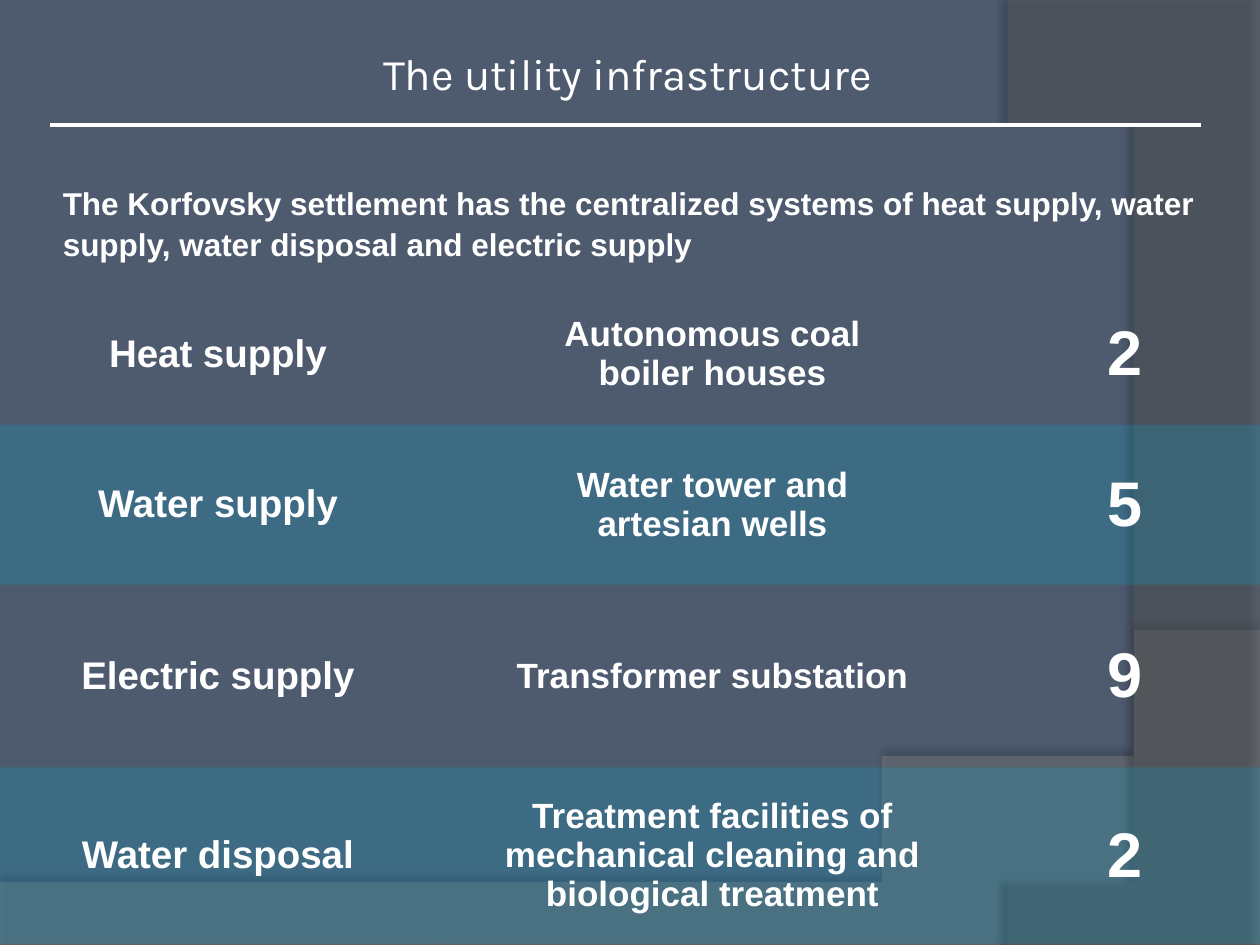
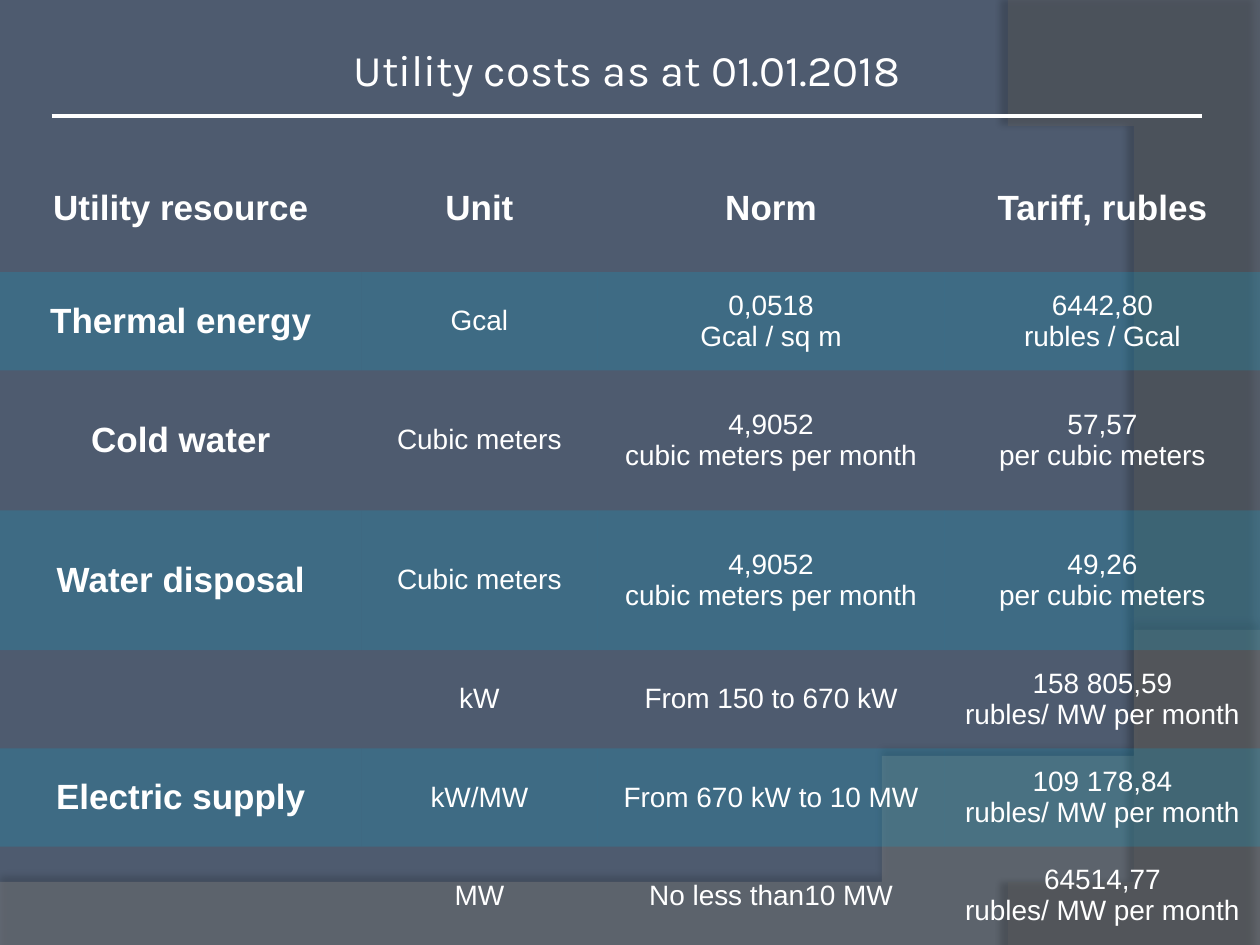
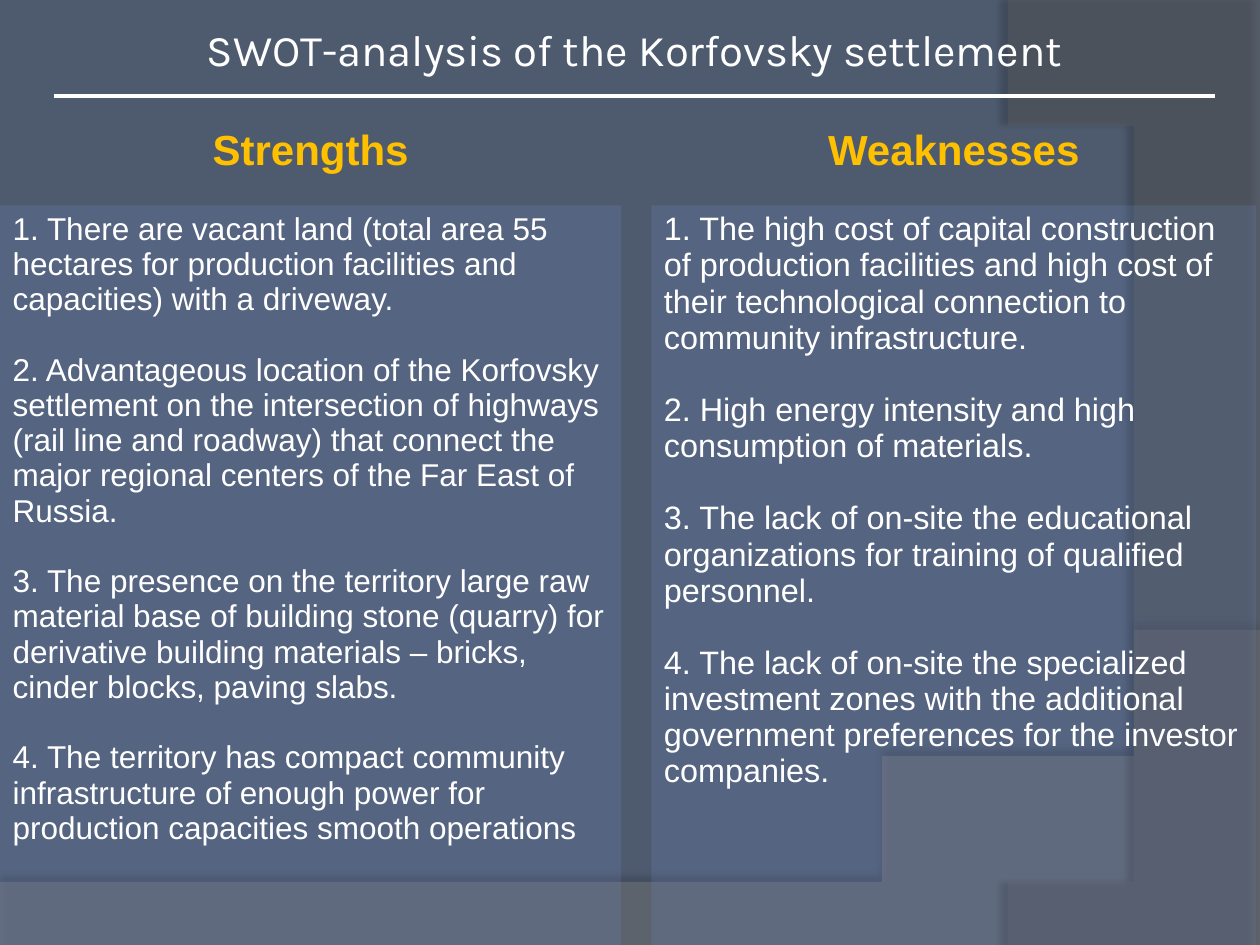
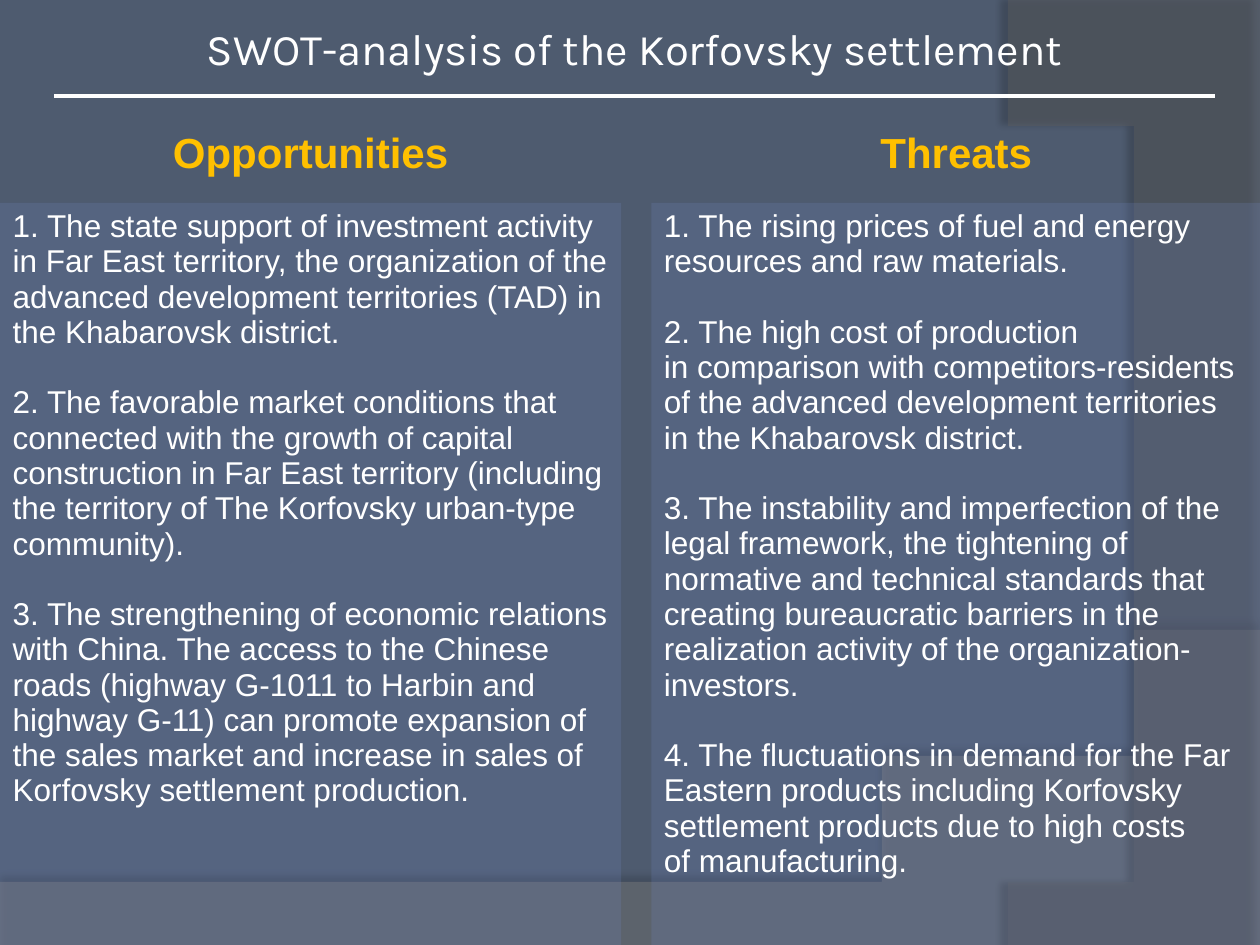
from dataclasses import dataclass, field
from typing import NamedTuple

from lxml import etree
from pptx import Presentation
from pptx import util as u
from pptx.dml.color import RGBColor
from pptx.enum import shapes, text
from pptx.oxml.ns import qn

CENTER, LEFT = text.PP_ALIGN.CENTER, text.PP_ALIGN.LEFT
TOP, MIDDLE = text.MSO_ANCHOR.TOP, text.MSO_ANCHOR.MIDDLE
PLAIN_TABLE_STYLE = "{2D5ABB26-0587-4C30-8999-92F81FD0307C}"


class Look(NamedTuple):
    size: float
    bold: bool = False
    color: str = "FFFFFF"
    font: str = "Arial"
    align: text.PP_ALIGN = CENTER
    anchor: text.MSO_ANCHOR = MIDDLE


@dataclass(frozen=True)
class Theme:
    background: str = "4E5B6F"
    rule: str = "FFFFFF"
    rule_width: float = 2.25
    row_tint: str = "00ADDC"
    panel_tint: str = "738AC8"
    tint_opacity: int = 20
    line_height: float = 1.117
    title: Look = Look(25, font="Karla", anchor=TOP)
    intro: Look = Look(18, bold=True, align=LEFT, anchor=TOP)
    supply: Look = Look(22, bold=True)
    facility: Look = Look(20, bold=True)
    count: Look = Look(36, bold=True)
    value: Look = Look(16)
    swot_head: Look = Look(24, bold=True, color="FFC000")
    swot_body: Look = Look(18, align=LEFT, anchor=TOP)
    swot_body_large: Look = Look(18.5, align=LEFT, anchor=TOP)


THEME = Theme()


class Point(NamedTuple):
    x: float
    y: float


class Shadow(NamedTuple):
    opacity: int
    blur: float
    distance: float
    direction: int


class Band(NamedTuple):
    outline: list[Point]
    color: str
    opacity: int
    shadow: Shadow


class Heading(NamedTuple):
    wording: str
    left: float
    top: float
    width: float
    height: float
    rule_left: float
    rule_y: float
    rule_right: float


class Cell(NamedTuple):
    wording: str = ""
    look: Look = THEME.value
    tint: str | None = None


@dataclass
class Grid:
    left: float
    top: float
    columns: list[float]
    rows: list[float]
    cells: list[list[Cell]] = field(default_factory=list)


def curve(start: Point, pull_a: Point, pull_b: Point, end: Point, steps: int = 40) -> list[Point]:
    """Points along a cubic Bezier curve, without its start."""
    points = []
    for step in range(1, steps + 1):
        t = step / steps
        weights = ((1 - t) ** 3, 3 * t * (1 - t) ** 2, 3 * t * t * (1 - t), t ** 3)
        ends = (start, pull_a, pull_b, end)
        points.append(Point(sum(w * p.x for w, p in zip(weights, ends)),
                            sum(w * p.y for w, p in zip(weights, ends))))
    return points


BANDS = [
    Band([Point(0, 7.05), Point(0, 7.51), Point(10, 7.51), Point(10, 5.2),
          *curve(Point(10, 5.2), Point(5.59, 7.29), Point(3.91, 7.19), Point(0, 7.05))],
         "7F7F7F", 45, Shadow(35, 4, 3.5, 270)),
    Band([Point(10, 0.02), Point(10, 7.5), Point(8.21, 7.5),
          *curve(Point(8.21, 7.5), Point(9.35, 6.19), Point(10.18, 3), Point(8, 0))],
         "5E5E5E", 40, Shadow(45, 4, 4, 180)),
]


def set_opacity(color_element, percent: int) -> None:
    etree.SubElement(color_element, qn("a:alpha"), val=str(percent * 1000))


def paint(fill, color: str) -> None:
    fill.solid()
    fill.fore_color.rgb = RGBColor.from_string(color)


def write(frame, wording: str, look: Look, gap: float = 0, spacing: float | None = None) -> None:
    """Fill a text frame; each line of the wording is a paragraph, gap points apart."""
    frame.text = wording
    font_format = {"name": look.font, "size": u.Pt(look.size), "bold": look.bold}
    for index, paragraph in enumerate(frame.paragraphs):
        paragraph.alignment = look.align
        if spacing:
            paragraph.line_spacing = spacing
        if index and gap:
            paragraph.space_before = u.Pt(gap)
        for run in paragraph.runs:
            for name, value in font_format.items():
                setattr(run.font, name, value)
            run.font.color.rgb = RGBColor.from_string(look.color)


def fit_frame(frame, look: Look) -> None:
    frame_format = {"word_wrap": True, "vertical_anchor": look.anchor,
                    "auto_size": text.MSO_AUTO_SIZE.SHAPE_TO_FIT_TEXT}
    for name, value in frame_format.items():
        setattr(frame, name, value)


def add_band(slide, band: Band):
    builder = slide.shapes.build_freeform(*band.outline[0], scale=u.Inches(1))
    builder.add_line_segments(band.outline[1:], close=True)
    shape = builder.convert_to_shape()
    paint(shape.fill, band.color)
    set_opacity(shape.element.xpath("./p:spPr/a:solidFill/a:srgbClr")[0], band.opacity)
    shape.line.fill.background()
    shape.shadow.inherit = False
    effects = shape.element.xpath("./p:spPr/a:effectLst")[0]
    shadow = etree.SubElement(
        effects, qn("a:outerShdw"), blurRad=str(u.Pt(band.shadow.blur)),
        dist=str(u.Pt(band.shadow.distance)), dir=str(band.shadow.direction * 60000),
        algn="ctr", rotWithShape="0")
    set_opacity(etree.SubElement(shadow, qn("a:srgbClr"), val="000000"), band.shadow.opacity)
    return shape


def dress_master(deck, slide) -> None:
    """Give the master its background and bands, which are drawn on a slide and moved."""
    master = deck.slide_master
    paint(master.background.fill, THEME.background)
    for index, band in enumerate(BANDS):
        shape = add_band(slide, band)
        shape.element.xpath(".//p:cNvPr")[0].set("id", str(20 + index))
        master.shapes.element.insert(2 + index, shape.element)


def add_heading(slide, heading: Heading) -> None:
    title = slide.shapes.title
    for side in ("left", "top", "width", "height"):
        setattr(title, side, u.Inches(getattr(heading, side)))
    write(title.text_frame, heading.wording, THEME.title)
    fit_frame(title.text_frame, THEME.title)

    y = u.Inches(heading.rule_y)
    rule = slide.shapes.add_connector(shapes.MSO_CONNECTOR.STRAIGHT, u.Inches(heading.rule_left), y,
                                      u.Inches(heading.rule_right), y)
    rule.line.color.rgb = RGBColor.from_string(THEME.rule)
    rule.line.width = u.Pt(THEME.rule_width)
    etree.SubElement(rule.element.xpath("./p:spPr")[0], qn("a:effectLst"))


def add_intro(slide, wording: str) -> None:
    box = slide.shapes.add_textbox(u.Inches(0.4), u.Inches(1.39), u.Inches(9.37), u.Inches(0.71))
    write(box.text_frame, wording, THEME.intro, spacing=1.08)
    fit_frame(box.text_frame, THEME.intro)


def add_grid(slide, grid: Grid) -> None:
    frame = slide.shapes.add_table(
        len(grid.rows), len(grid.columns), u.Inches(grid.left), u.Inches(grid.top),
        u.Inches(sum(grid.columns)), u.Inches(sum(grid.rows)))
    table = frame.table
    table.first_row = table.horz_banding = False
    frame.element.xpath(".//a:tableStyleId")[0].text = PLAIN_TABLE_STYLE
    for column, width in zip(table.columns, grid.columns):
        column.width = u.Inches(width)
    for row, height, contents in zip(table.rows, grid.rows, grid.cells):
        row.height = u.Inches(height)
        for cell, content in zip(row.cells, contents):
            look = content.look
            cell.vertical_anchor = look.anchor
            gap = round(look.size * THEME.line_height, 1) if look.anchor == TOP else 0
            write(cell.text_frame, content.wording, look, gap)
            if content.tint:
                paint(cell.fill, content.tint)
            else:
                cell.fill.background()
    for color in frame.element.xpath(".//a:tcPr/a:solidFill/a:srgbClr"):
        set_opacity(color, THEME.tint_opacity)


def striped(rows: list[tuple[str, ...]], looks: list[Look]) -> list[list[Cell]]:
    """Cells with one look per column and a tint on every second row."""
    return [[Cell(wording, look, THEME.row_tint if index % 2 else None)
             for wording, look in zip(row, looks)]
            for index, row in enumerate(rows)]


def swot(heads: tuple[str, str], bodies: tuple[str, str], looks: tuple[Look, Look]) -> list[list[Cell]]:
    """Two panels with headings and an empty column between them."""
    head_cells = [Cell(head, THEME.swot_head) for head in heads]
    body_cells = [Cell(body, look, THEME.panel_tint) for body, look in zip(bodies, looks)]
    return [[left, Cell(), right] for left, right in (head_cells, body_cells)]


INFRASTRUCTURE = [
    ("Heat supply", "Autonomous coal\nboiler houses", "2"),
    ("Water supply", "Water tower and\nartesian wells", "5"),
    ("Electric supply", "Transformer substation", "9"),
    ("Water disposal", "Treatment facilities of mechanical cleaning and biological treatment", "2"),
]
COST_HEADS = ("Utility resource", "Unit", "Norm", "Tariff, rubles")
COSTS = [
    ("Thermal energy", "Gcal", "0,0518\nGcal / sq m", "6442,80\nrubles / Gcal"),
    ("Cold water", "Cubic meters", "4,9052\ncubic meters per month", "57,57\nper cubic meters"),
    ("Water disposal", "Cubic meters", "4,9052\ncubic meters per month", "49,26\nper cubic meters"),
    ("", "kW", "From 150 to 670 kW", "158 805,59\nrubles/ MW per month"),
    ("Electric supply", "kW/MW", "From 670 kW to 10 MW", "109 178,84\nrubles/ MW per month"),
    ("", "MW", "No less than10 MW", "64514,77\nrubles/ MW per month"),
]
STRENGTHS = "\n".join([
    "1. There are vacant land (total area 55 hectares for production facilities and capacities) "
    "with a driveway.",
    "2. Advantageous location of the Korfovsky settlement on the intersection of highways "
    "(rail line and roadway) that connect the major regional centers of the Far East of Russia.",
    "3. The presence on the territory large raw material base of building stone (quarry) for "
    "derivative building materials – bricks, cinder blocks, paving slabs.",
    "4. The territory has compact community infrastructure of enough power for production "
    "capacities smooth operations",
])
WEAKNESSES = "\n".join([
    "1. The high cost of capital construction of production facilities and high cost of their "
    "technological connection to community infrastructure.",
    "2. High energy intensity and high consumption of materials.",
    "3. The lack of on-site the educational organizations for training of qualified personnel.",
    "4. The lack of on-site the specialized investment zones with the additional government "
    "preferences for the investor companies.",
])
OPPORTUNITIES = "\n".join([
    "1. The state support of investment activity in Far East territory, the organization of the "
    "advanced development territories (TAD) in the Khabarovsk district.",
    "2. The favorable market conditions that connected with the growth of capital construction "
    "in Far East territory (including the territory of The Korfovsky urban-type community).",
    "3. The strengthening of economic relations with China. The access to the Chinese roads "
    "(highway G-1011 to Harbin and highway G-11) can promote expansion of the sales market and "
    "increase in sales of Korfovsky settlement production.",
])
THREATS = "\n".join([
    "1. The rising prices of fuel and energy resources and raw materials.",
    "2. The high cost of production\vin comparison with competitors-residents of the advanced "
    "development territories in the Khabarovsk district.",
    "3. The instability and imperfection of the legal framework, the tightening of normative and "
    "technical standards that creating bureaucratic barriers in the realization activity of the "
    "organization-investors.",
    "4. The fluctuations in demand for the Far Eastern products including Korfovsky settlement "
    "products due to high costs\vof manufacturing.",
])
SWOT_TITLE = "SWOT-analysis of the Korfovsky settlement"

PAGES = [
    (Heading("The utility infrastructure", 0.43, 0.32, 9.1, 0.52, 0.4, 0.99, 9.53),
     Grid(0, 2.25, [3.46, 4.39, 2.15], [1.12, 1.27, 1.45, 1.4],
          striped(INFRASTRUCTURE, [THEME.supply, THEME.facility, THEME.count]))),
    (Heading("Utility costs as at 01.01.2018", 0.41, 0.29, 9.13, 0.52, 0.41, 0.92, 9.54),
     Grid(0, 1.15, [2.87, 1.87, 2.76, 2.5], [1.01, 0.78, 1.11, 1.11, 0.78, 0.78, 0.78],
          [[Cell(head, THEME.facility) for head in COST_HEADS],
           *striped([COST_HEADS, *COSTS], [THEME.facility] + [THEME.value] * 3)[1:]])),
    (Heading(SWOT_TITLE, 0.43, 0.13, 9.21, 0.94, 0.43, 0.76, 9.64),
     Grid(0, 0.76, [4.93, 0.23, 4.8], [0.87, 5.91],
          swot(("Strengths", "Weaknesses"), (STRENGTHS, WEAKNESSES),
               (THEME.swot_body, THEME.swot_body_large)))),
    (Heading(SWOT_TITLE, 0.43, 0.12, 9.21, 0.94, 0.43, 0.76, 9.64),
     Grid(0, 0.84, [4.93, 0.23, 4.84], [0.77, 5.9],
          swot(("Opportunities", "Threats"), (OPPORTUNITIES, THREATS),
               (THEME.swot_body, THEME.swot_body)))),
]


def main() -> None:
    deck = Presentation()
    deck.slide_width, deck.slide_height = u.Inches(10), u.Inches(7.5)
    title_only = deck.slide_layouts.get_by_name("Title Only")
    slides = [deck.slides.add_slide(title_only) for _ in PAGES]
    dress_master(deck, slides[0])
    for slide, (heading, _) in zip(slides, PAGES):
        add_heading(slide, heading)
    add_intro(slides[0], "The Korfovsky settlement has the centralized systems of heat supply, "
                         "water supply, water disposal and electric supply")
    for slide, (_, grid) in zip(slides, PAGES):
        add_grid(slide, grid)
    deck.save("out.pptx")


if __name__ == "__main__":
    main()
